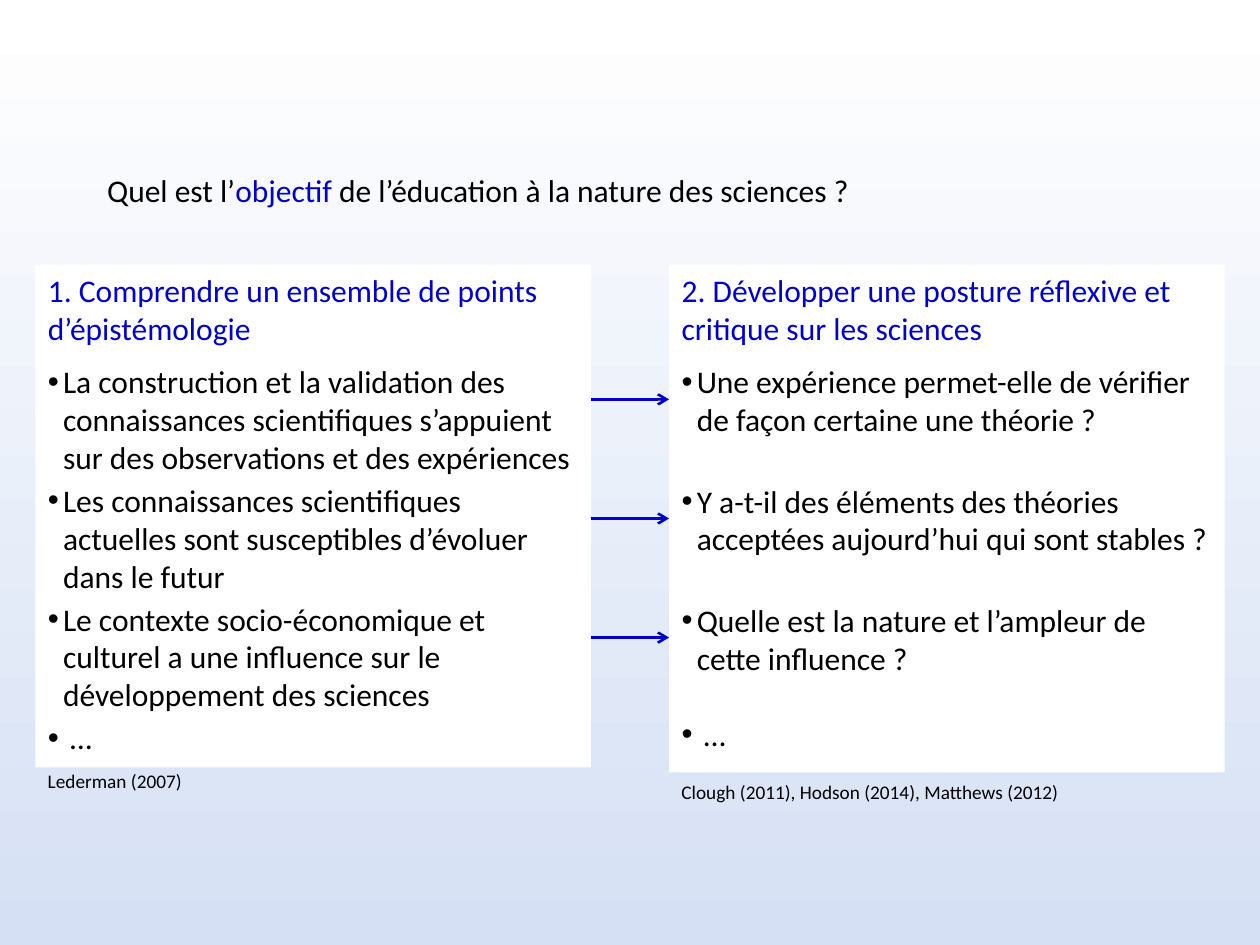
from lxml import etree
from pptx import Presentation
from pptx import util as u
from pptx.dml.color import RGBColor
from pptx.enum import shapes, text
from pptx.oxml import ns

COLORS = {"text": "000000", "accent": "0000CC", "panel": "FFFFFF",
          "sky_top": "FFFFFF", "sky_bottom": "D5E0F4"}
FONT = "Calibri"
BODY_SIZE, SOURCE_SIZE = 18, 11
BULLET_INDENT = 0.12
BLANK_LINE = 22  # height in points of one line of body text

PANEL_TOP, PANEL_WIDTH = 2.1, 4.41
LEFT_X, RIGHT_X = 0.28, 5.31
ARROW_TOP, ARROW_STEP, ARROW_COUNT = 3.17, 0.945, 3

POINTS = [
    "La construction et la validation des connaissances scientifiques s’appuient "
    "sur des observations et des expériences",
    "Les connaissances scientifiques actuelles sont susceptibles d’évoluer dans le futur",
    "Le contexte socio-économique et culturel a une influence sur le "
    "développement des sciences",
    " …",
]
QUESTIONS = [
    "Une expérience permet-elle de vérifier de façon certaine une théorie ?",
    "Y a-t-il des éléments des théories acceptées aujourd’hui qui sont stables ?",
    "Quelle est la nature et l’ampleur de cette influence ?",
    " …",
]


def rgb(name):
    return RGBColor.from_string(COLORS[name])


def place(shape, left, top, width, height):
    shape.left, shape.top = u.Inches(left), u.Inches(top)
    shape.width, shape.height = u.Inches(width), u.Inches(height)


def prepare_frame(shape):
    frame = shape.text_frame
    frame.word_wrap = True
    frame.auto_size = text.MSO_AUTO_SIZE.NONE
    frame.vertical_anchor = text.MSO_ANCHOR.TOP
    return frame


def add_run(paragraph, words, color="text", size=BODY_SIZE):
    run = paragraph.add_run()
    run.text = words
    run.font.name, run.font.size = FONT, u.Pt(size)
    run.font.color.rgb = rgb(color)


def format_paragraph(paragraph, before=0, after=0, bullet=False):
    paragraph.alignment = text.PP_ALIGN.LEFT
    paragraph.space_before, paragraph.space_after = u.Pt(before), u.Pt(after)
    properties = paragraph._p.get_or_add_pPr()
    indent = u.Inches(BULLET_INDENT) if bullet else 0
    properties.set("marL", str(indent))
    properties.set("indent", str(-indent))
    if bullet:
        etree.SubElement(properties, ns.qn("a:buFont")).set("typeface", "Arial")
        etree.SubElement(properties, ns.qn("a:buChar")).set("char", "•")
    else:
        etree.SubElement(properties, ns.qn("a:buNone"))


def paint_background(slide):
    fill = slide.background.fill
    fill.gradient()
    fill.gradient_angle = 270
    stops = zip(fill.gradient_stops, ("sky_top", "sky_bottom"), (0.01, 1))
    for stop, color, position in stops:
        stop.color.rgb = rgb(color)
        stop.position = position


def fill_title(title, box):
    place(title, *box)
    paragraph = prepare_frame(title).paragraphs[0]
    format_paragraph(paragraph)
    add_run(paragraph, "Quel est l’")
    add_run(paragraph, "objectif", "accent")
    add_run(paragraph, " de l’éducation à la nature des sciences\u00a0?")


def fill_panel(panel, box, heading, items, gaps):
    """Write a heading and bullets; gaps are the points above each bullet."""
    place(panel, *box)
    panel.fill.solid()
    panel.fill.fore_color.rgb = rgb("panel")
    frame = prepare_frame(panel)
    format_paragraph(frame.paragraphs[0], after=6)
    add_run(frame.paragraphs[0], heading, "accent")
    for item, gap in zip(items, gaps):
        paragraph = frame.add_paragraph()
        format_paragraph(paragraph, before=gap, bullet=True)
        add_run(paragraph, item)


def add_source(slide, box, words):
    source = slide.shapes.add_textbox(*map(u.Inches, box))
    add_run(prepare_frame(source).paragraphs[0], words, size=SOURCE_SIZE)


def add_arrows(slide, left, right):
    for row in range(ARROW_COUNT):
        y = u.Inches(ARROW_TOP + row * ARROW_STEP)
        arrow = slide.shapes.add_connector(
            shapes.MSO_CONNECTOR.STRAIGHT, u.Inches(left), y, u.Inches(right), y)
        arrow.line.color.rgb = rgb("accent")
        arrow.line.width = u.Pt(1.5)
        line = arrow.line._get_or_add_ln()
        etree.SubElement(line, ns.qn("a:tailEnd")).set("type", "arrow")
        etree.SubElement(arrow._element.spPr, ns.qn("a:effectLst"))


def main():
    presentation = Presentation()
    presentation.slide_width = u.Inches(10)
    presentation.slide_height = u.Inches(7.5)
    two_content = presentation.slide_layouts[3]
    slide = presentation.slides.add_slide(two_content)
    title, left_panel, right_panel = slide.placeholders

    paint_background(slide)
    fill_title(title, (0.75, 1.31, 8.35, 0.4))
    fill_panel(left_panel, (LEFT_X, PANEL_TOP, PANEL_WIDTH, 3.99),
               "1. Comprendre un ensemble de points d’épistémologie",
               POINTS, (3, 3, 3, 3))
    fill_panel(right_panel, (RIGHT_X, PANEL_TOP, PANEL_WIDTH, 4.03),
               "2. Développer une posture réflexive et critique sur les sciences",
               QUESTIONS, (3, BLANK_LINE + 3, BLANK_LINE + 3, BLANK_LINE))
    add_arrows(slide, LEFT_X + PANEL_WIDTH, RIGHT_X)
    add_source(slide, (RIGHT_X, 6.14, 3.23, 0.29),
               "Clough (2011), Hodson (2014), Matthews (2012)")
    add_source(slide, (LEFT_X, 6.06, 1.35, 0.29), "Lederman (2007)")
    presentation.save("out.pptx")


if __name__ == "__main__":
    main()
